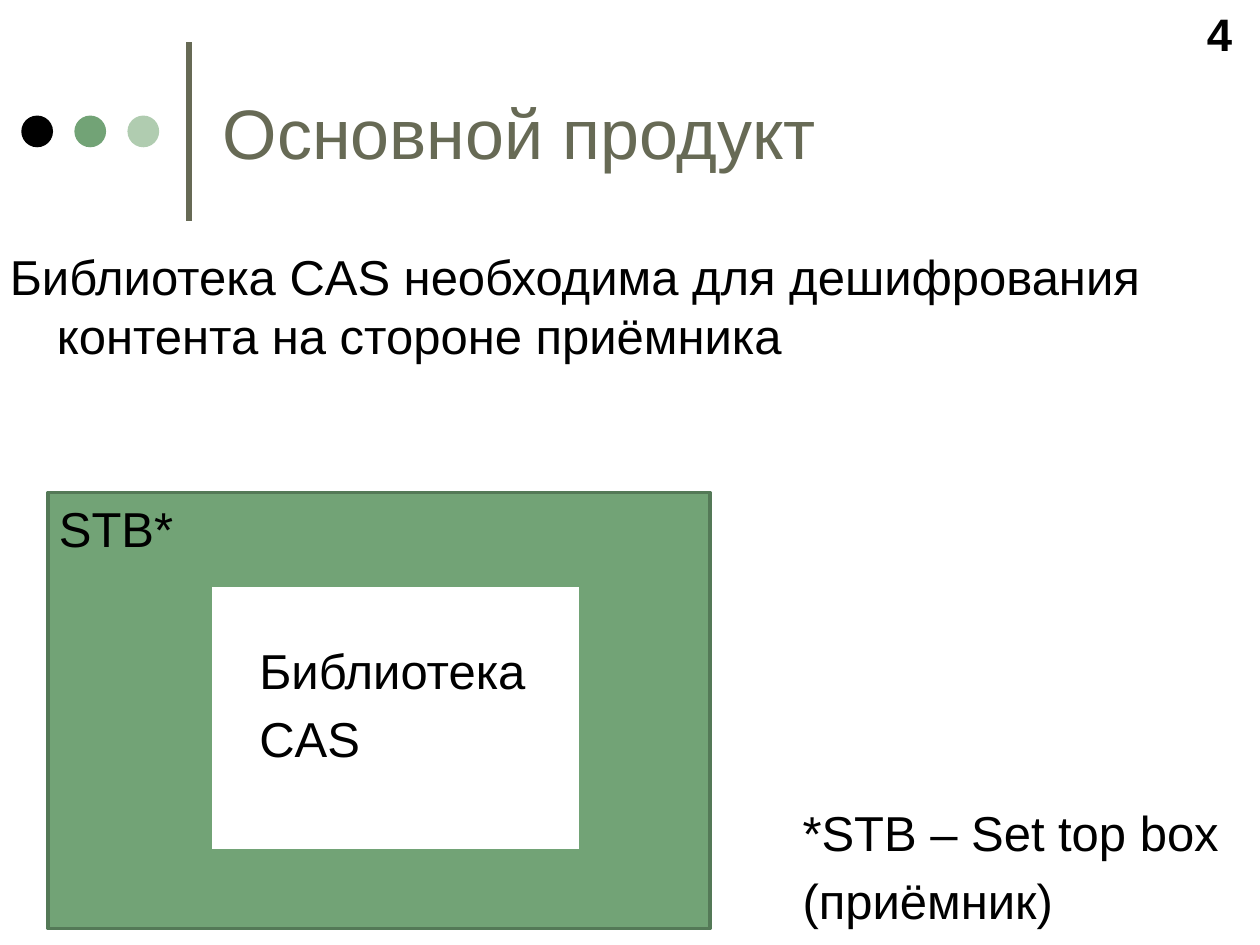
from lxml import etree
from pptx import Presentation
from pptx import util as u
from pptx.dml.color import RGBColor
from pptx.enum import shapes, text
from pptx.oxml.ns import qn

COLORS = {
    "ink": "000000",
    "title": "676A55",
    "green": "72A376",
    "pale": "B0CCB0",
    "edge": "547957",
    "white": "FFFFFF",
}


def rgb(name):
    return RGBColor.from_string(COLORS[name])


def write(tf, content, size=28, color="ink", bold=False, align=text.PP_ALIGN.LEFT,
          anchor=text.MSO_ANCHOR.TOP, hanging=0, before=0):
    tf.word_wrap = True
    tf.vertical_anchor = anchor
    for i, line in enumerate(content.split("\n")):
        p = tf.add_paragraph() if i else tf.paragraphs[0]
        p.alignment = align
        p.space_before = u.Pt(before)
        if hanging:
            pPr = p._p.get_or_add_pPr()
            pPr.set("marL", str(u.Cm(hanging)))
            pPr.set("indent", str(-u.Cm(hanging)))
        r = p.add_run()
        r.text = line
        r.font.name = "Arial"
        r.font.size = u.Pt(size)
        r.font.bold = bold
        r.font.color.rgb = rgb(color)


class SlideBuilder:
    """Holds the style and the current slide, and adds elements in centimetres."""

    body = {"size": 28, "hanging": 0.95, "before": 5.6}

    def __init__(self, prs):
        self.s = prs.slides.add_slide(prs.slide_layouts[6])

    def shape(self, kind, box, fill, line=None):
        sp = self.s.shapes.add_shape(kind, *map(u.Cm, box))
        sp.shadow.inherit = False
        sp.fill.solid()
        sp.fill.fore_color.rgb = rgb(fill)
        if line:
            sp.line.color.rgb = rgb(line)
            sp.line.width = u.Pt(2)
        else:
            sp.line.fill.background()

    def line(self, x1, y1, x2, y2, color, width):
        c = self.s.shapes.add_connector(
            shapes.MSO_CONNECTOR.STRAIGHT, *map(u.Cm, (x1, y1, x2, y2)))
        c.line.color.rgb = rgb(color)
        c.line.width = u.Pt(width)
        etree.SubElement(c._element.spPr, qn("a:effectLst"))

    def label(self, box, content, **fmt):
        sp = self.s.shapes.add_textbox(*map(u.Cm, box))
        write(sp.text_frame, content, **(fmt or self.body))


def main():
    prs = Presentation()
    prs.slide_width, prs.slide_height = u.Cm(25.4), u.Cm(19.05)
    b = SlideBuilder(prs)
    rect, oval = shapes.MSO_SHAPE.RECTANGLE, shapes.MSO_SHAPE.OVAL

    b.line(3.81, 4.45, 3.81, 0.84, "title", 3)
    for i, color in enumerate(("ink", "green", "pale")):
        b.shape(oval, (0.43 + 1.07 * i, 2.33, 0.64, 0.64), color)

    b.label((23.77, 0, 1.63, 1.35), "4", size=26, bold=True,
            align=text.PP_ALIGN.CENTER, anchor=text.MSO_ANCHOR.BOTTOM)
    b.label((4.24, 0.53, 19.48, 4.24), "Основной продукт", size=40,
            color="title", anchor=text.MSO_ANCHOR.MIDDLE)
    b.label((-0.05, 4.85, 25.45, 3.07),
            "Библиотека CAS необходима для дешифрования контента на стороне приёмника")

    b.shape(rect, (0.97, 9.93, 13.34, 8.79), "green", "edge")
    b.shape(rect, (4.24, 11.79, 7.47, 5.36), "white", "green")
    b.label((4.98, 12.78, 5.99, 3.07), "Библиотека\nCAS")
    b.label((0.94, 9.93, 5.99, 3.07), "STB*")
    b.label((15.93, 16.05, 9.47, 2.67), "*STB – Set top box\n(приёмник)")

    prs.save("out.pptx")


if __name__ == "__main__":
    main()
